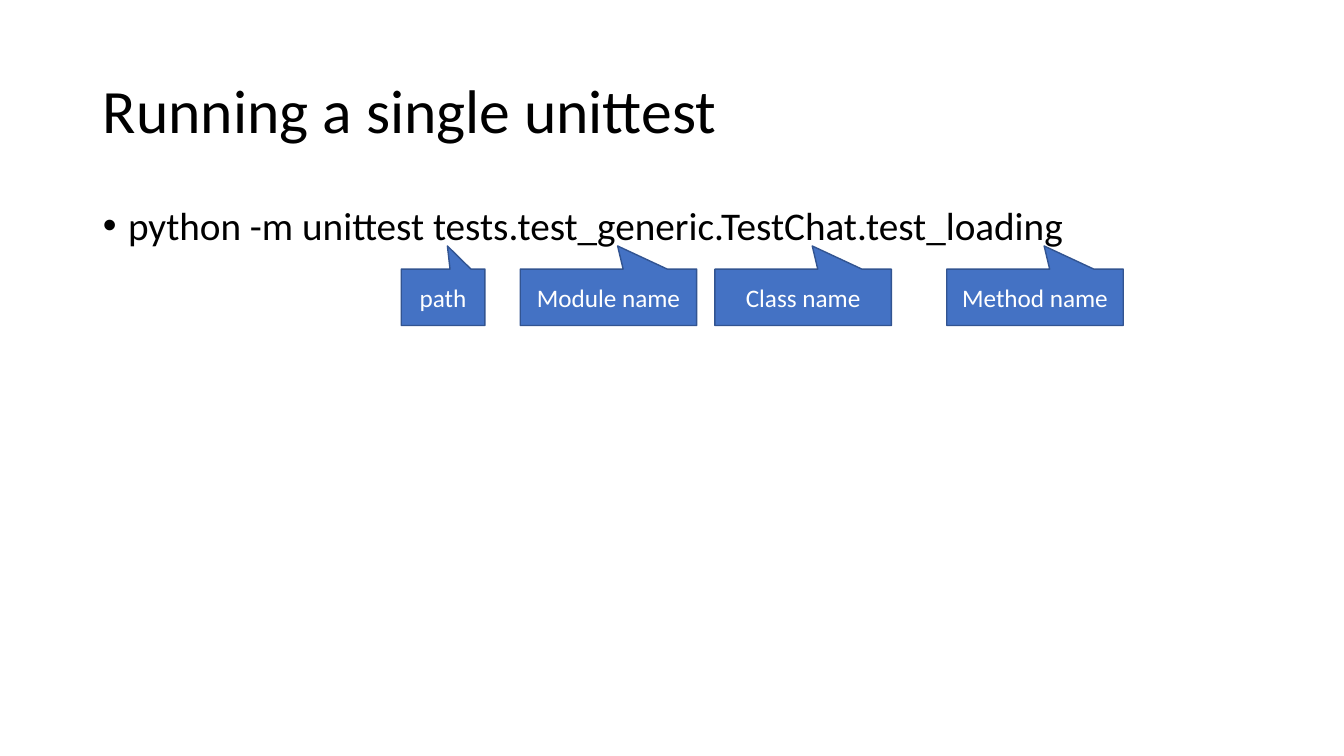
from dataclasses import dataclass

from pptx import Presentation, util as u
from pptx.dml.color import RGBColor
from pptx.enum import shapes, text


@dataclass(frozen=True)
class Theme:
    font: str = "Calibri"
    ink: str = "000000"
    paper: str = "FFFFFF"
    accent: str = "4472C4"
    outline: str = "325491"
    title_pt: int = 44
    body_pt: int = 28
    label_pt: int = 18


THEME = Theme()
WIDTH, HEIGHT = 13.33, 7.5
MARGIN = 0.92
CONTENT_W = WIDTH - 2 * MARGIN
CALLOUT_TOP, CALLOUT_H = 2.67, 0.56
# Label, left edge and width of each callout
CALLOUTS = [
    ("path", 3.98, 0.83),
    ("Module name", 5.16, 1.75),
    ("Class name", 7.09, 1.75),
    ("Method name", 9.39, 1.75),
]


def place(sp, box):
    sp.left, sp.top, sp.width, sp.height = (u.Inches(v) for v in box)


def write(sp, words, size, color, align, anchor):
    tf = sp.text_frame
    tf.text = words
    tf.word_wrap = True
    tf.auto_size = text.MSO_AUTO_SIZE.NONE
    tf.vertical_anchor = anchor
    p = tf.paragraphs[0]
    p.alignment = align
    p.font.name = THEME.font
    p.font.size = u.Pt(size)
    p.font.color.rgb = RGBColor.from_string(color)
    return p


def add_title(s, box, words):
    sp = s.shapes.title
    place(sp, box)
    p = write(sp, words, THEME.title_pt, THEME.ink,
              text.PP_ALIGN.LEFT, text.MSO_ANCHOR.MIDDLE)
    p.line_spacing = 0.9


def add_command(s, box, words):
    sp = s.placeholders[1]
    place(sp, box)
    p = write(sp, words, THEME.body_pt, THEME.ink,
              text.PP_ALIGN.LEFT, text.MSO_ANCHOR.TOP)
    p.line_spacing = 0.9
    p.space_before = u.Pt(10)
    # Hanging indent for the template's bullet
    pPr = p._p.get_or_add_pPr()
    pPr.set("marL", str(u.Inches(0.25)))
    pPr.set("indent", str(u.Inches(-0.25)))


def add_callout(s, box, label):
    sp = s.shapes.add_shape(shapes.MSO_SHAPE.RECTANGULAR_CALLOUT,
                            *(u.Inches(v) for v in box))
    # Pointer tip, as shares of the box from its centre
    sp.adjustments[0], sp.adjustments[1] = 0.052, -0.91
    sp.shadow.inherit = False
    sp.fill.solid()
    sp.fill.fore_color.rgb = RGBColor.from_string(THEME.accent)
    sp.line.color.rgb = RGBColor.from_string(THEME.outline)
    sp.line.width = u.Pt(1)
    write(sp, label, THEME.label_pt, THEME.paper,
          text.PP_ALIGN.CENTER, text.MSO_ANCHOR.MIDDLE)


def main():
    prs = Presentation()
    prs.slide_width, prs.slide_height = u.Inches(WIDTH), u.Inches(HEIGHT)
    s = prs.slides.add_slide(prs.slide_layouts[1])

    # Heading and command line
    add_title(s, (MARGIN, 0.4, CONTENT_W, 1.45), "Running a single unittest")
    add_command(s, (MARGIN, 2, CONTENT_W, 4.76),
                "python -m unittest tests.test_generic.TestChat.test_loading")

    # Callouts naming each part of the dotted test name
    for label, left, width in CALLOUTS:
        add_callout(s, (left, CALLOUT_TOP, width, CALLOUT_H), label)

    prs.save("out.pptx")


if __name__ == "__main__":
    main()
